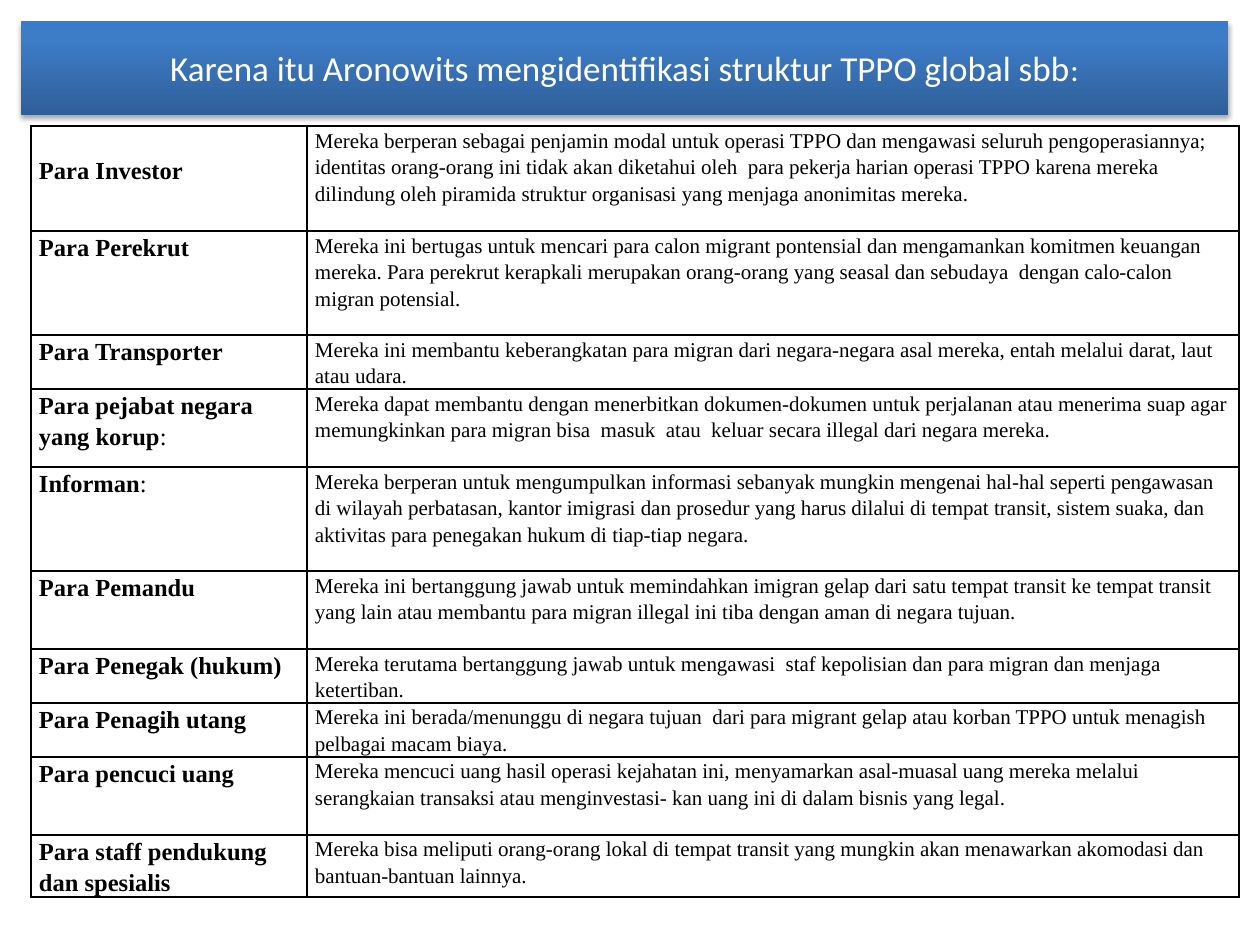
import copy
from typing import NamedTuple

import lxml.etree
import pptx
import pptx.dml.color
import pptx.enum.shapes
import pptx.enum.text
import pptx.oxml
import pptx.oxml.ns
import pptx.shapes.autoshape
import pptx.slide
import pptx.table
import pptx.util

PX = 914400 / 126
BLACK = pptx.dml.color.RGBColor(0x00, 0x00, 0x00)
WHITE = pptx.dml.color.RGBColor(0xFF, 0xFF, 0xFF)
BLUE_DARK = pptx.dml.color.RGBColor(0x2F, 0x5F, 0x99)
BLUE_MID = pptx.dml.color.RGBColor(0x3D, 0x7C, 0xC7)
BLUE_LIGHT = pptx.dml.color.RGBColor(0x3A, 0x7C, 0xCB)
BANNER_STOPS = [(0, BLUE_DARK), (0.8, BLUE_MID), (1, BLUE_LIGHT)]
BANNER_FONT = "Calibri"
TABLE_FONT = "Times New Roman"
COLUMN_WIDTHS = [276, 932]


class Role(NamedTuple):
    name: str
    duty: str
    height: int
    suffix: str = ""
    name_offset: int = 0


ROLES = [
    Role("Para Investor",
         "Mereka berperan sebagai penjamin modal untuk operasi TPPO dan mengawasi seluruh "
         "pengoperasiannya; identitas orang-orang ini tidak akan diketahui oleh  para pekerja "
         "harian operasi TPPO karena mereka dilindung oleh piramida struktur organisasi yang "
         "menjaga anonimitas mereka.", 105, name_offset=28),
    Role("Para Perekrut",
         "Mereka ini bertugas untuk mencari para calon migrant pontensial dan mengamankan "
         "komitmen keuangan mereka. Para perekrut kerapkali merupakan orang-orang yang seasal "
         "dan sebudaya  dengan calo-calon migran potensial.", 104),
    Role("Para Transporter",
         "Mereka ini membantu keberangkatan para migran dari negara-negara asal mereka, entah "
         "melalui darat, laut atau udara.", 54),
    Role("Para pejabat negara yang korup",
         "Mereka dapat membantu dengan menerbitkan dokumen-dokumen untuk perjalanan atau "
         "menerima suap agar memungkinkan para migran bisa  masuk  atau  keluar secara illegal "
         "dari negara mereka.", 78, suffix=":"),
    Role("Informan",
         "Mereka berperan untuk mengumpulkan informasi sebanyak mungkin mengenai hal-hal seperti "
         "pengawasan di wilayah perbatasan, kantor imigrasi dan prosedur yang harus dilalui di "
         "tempat transit, sistem suaka, dan aktivitas para penegakan hukum di tiap-tiap negara.",
         104, suffix=":"),
    Role("Para Pemandu",
         "Mereka ini bertanggung jawab untuk memindahkan imigran gelap dari satu tempat transit "
         "ke tempat transit yang lain atau membantu para migran illegal ini tiba dengan aman di "
         "negara tujuan.", 78),
    Role("Para Penegak (hukum)",
         "Mereka terutama bertanggung jawab untuk mengawasi  staf kepolisian dan para migran dan "
         "menjaga ketertiban.", 54),
    Role("Para Penagih utang",
         "Mereka ini berada/menunggu di negara tujuan  dari para migrant gelap atau korban TPPO "
         "untuk menagish pelbagai macam biaya.", 54),
    Role("Para pencuci uang",
         "Mereka mencuci uang hasil operasi kejahatan ini, menyamarkan asal-muasal uang mereka "
         "melalui serangkaian transaksi atau menginvestasi- kan uang ini di dalam bisnis yang "
         "legal.", 78),
    Role("Para staff pendukung dan spesialis",
         "Mereka bisa meliputi orang-orang lokal di tempat transit yang mungkin akan menawarkan "
         "akomodasi dan bantuan-bantuan lainnya.", 62),
]


def px(length: int) -> pptx.util.Emu:
    return pptx.util.Emu(round(length * PX))


def fill_banner(shape: pptx.shapes.autoshape.Shape) -> None:
    shape.fill.gradient()
    shape.fill.gradient_angle = 90
    stop_list = shape.element.spPr.find(".//" + pptx.oxml.ns.qn("a:gsLst"))
    stop_list.append(copy.deepcopy(stop_list[-1]))
    for stop, (position, color) in zip(shape.fill.gradient_stops, BANNER_STOPS):
        stop.position = position
        stop.color.rgb = color


def add_shadow(shape: pptx.shapes.autoshape.Shape) -> None:
    shape.shadow.inherit = False
    effects = shape.element.spPr.find(pptx.oxml.ns.qn("a:effectLst"))
    shadow = lxml.etree.SubElement(
        effects, pptx.oxml.ns.qn("a:outerShdw"), blurRad=str(pptx.util.Pt(3.1)),
        dist=str(pptx.util.Pt(1.8)), dir="5400000", rotWithShape="0")
    color = lxml.etree.SubElement(shadow, pptx.oxml.ns.qn("a:srgbClr"), val=str(BLACK))
    lxml.etree.SubElement(color, pptx.oxml.ns.qn("a:alpha"), val="35000")


def add_banner(slide: pptx.slide.Slide) -> None:
    shape = slide.shapes.add_shape(
        pptx.enum.shapes.MSO_SHAPE.RECTANGLE, px(21), px(21), px(1207), px(94))
    shape.line.fill.background()
    fill_banner(shape)
    add_shadow(shape)
    shape.text_frame.vertical_anchor = pptx.enum.text.MSO_ANCHOR.MIDDLE
    paragraph = shape.text_frame.paragraphs[0]
    paragraph.alignment = pptx.enum.text.PP_ALIGN.CENTER
    paragraph.font.name = BANNER_FONT
    paragraph.font.color.rgb = WHITE
    title = "Karena itu Aronowits mengidentifikasi struktur TPPO global sbb"
    for text, size in [(title, 20), (":", 18)]:
        run = paragraph.add_run()
        run.text = text
        run.font.size = pptx.util.Pt(size)


def set_borders(cell: pptx.table._Cell) -> None:
    properties = cell._tc.get_or_add_tcPr()
    for index, side in enumerate(("a:lnL", "a:lnR", "a:lnT", "a:lnB")):
        line = pptx.oxml.parse_xml(
            f'<{side} {pptx.oxml.ns.nsdecls("a")} w="{pptx.util.Pt(1)}">'
            f'<a:solidFill><a:srgbClr val="{BLACK}"/></a:solidFill></{side}>')
        properties.insert(index, line)


def write_cell(cell: pptx.table._Cell, text: str, size: int, bold: bool,
               suffix: str = "", offset: int = 0) -> None:
    """Style a cell; the suffix is never bold, the offset lowers the text."""
    cell.fill.background()
    set_borders(cell)
    cell.margin_left = cell.margin_right = px(8)
    cell.margin_top, cell.margin_bottom = px(offset), 0
    paragraph = cell.text_frame.paragraphs[0]
    paragraph.line_spacing = 1.15
    paragraph.font.name = TABLE_FONT
    paragraph.font.size = pptx.util.Pt(size)
    paragraph.font.color.rgb = BLACK
    paragraph.font.bold = bold
    paragraph.add_run().text = text
    if suffix:
        run = paragraph.add_run()
        run.text = suffix
        run.font.bold = False


def add_role_table(slide: pptx.slide.Slide) -> None:
    table = slide.shapes.add_table(
        len(ROLES), len(COLUMN_WIDTHS), px(31), px(126), px(sum(COLUMN_WIDTHS)),
        px(sum(role.height for role in ROLES))).table
    table.first_row = table.horz_banding = False
    for column, width in zip(table.columns, COLUMN_WIDTHS):
        column.width = px(width)
    for row, role in zip(table.rows, ROLES):
        row.height = px(role.height)
        name_cell, duty_cell = row.cells
        write_cell(name_cell, role.name, 14, True, role.suffix, role.name_offset)
        write_cell(duty_cell, role.duty, 12, False)


def main() -> None:
    presentation = pptx.Presentation()
    presentation.slide_width = px(1260)
    presentation.slide_height = px(945)
    slide = presentation.slides.add_slide(presentation.slide_layouts[6])
    add_banner(slide)
    add_role_table(slide)
    presentation.save("out.pptx")


if __name__ == "__main__":
    main()
